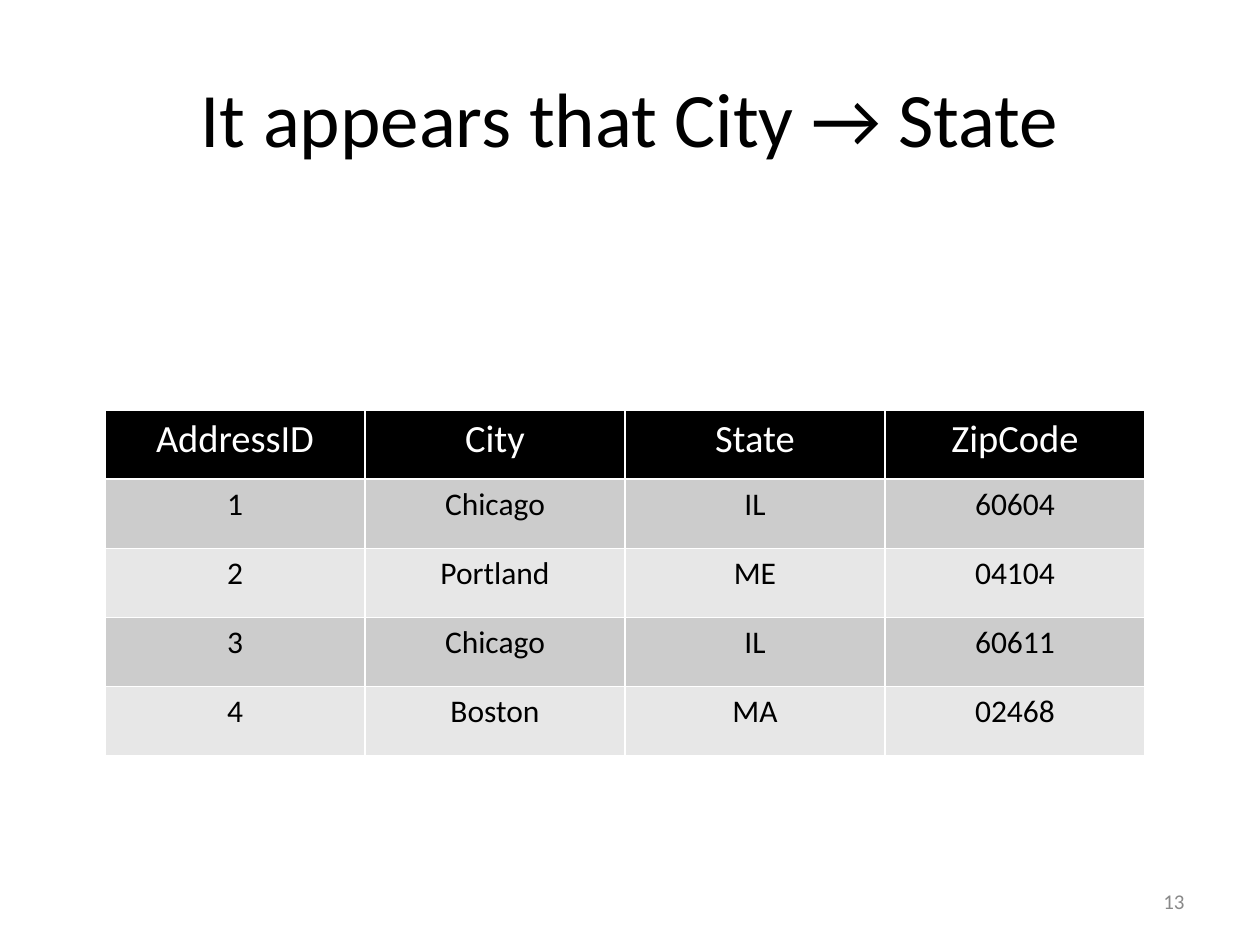
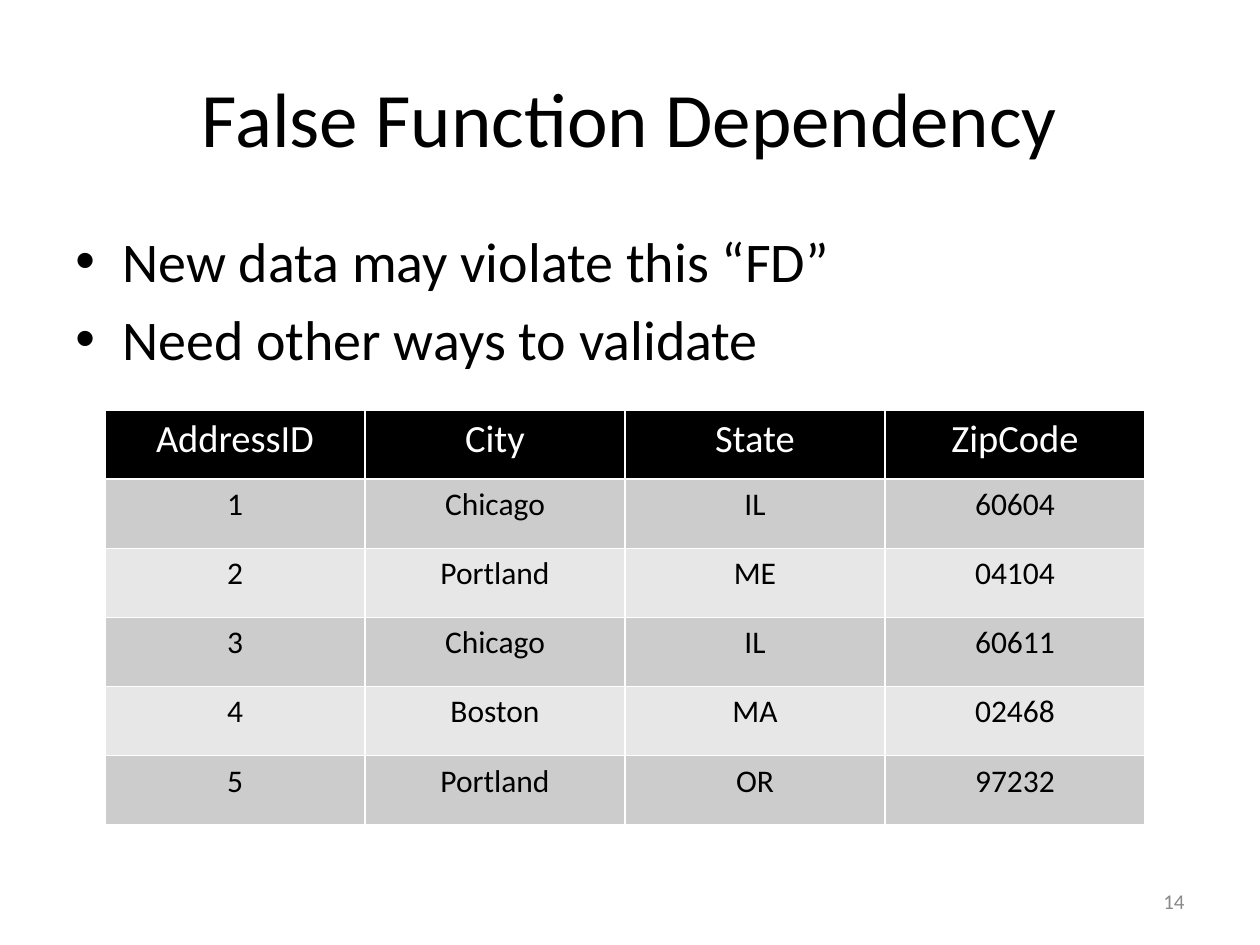
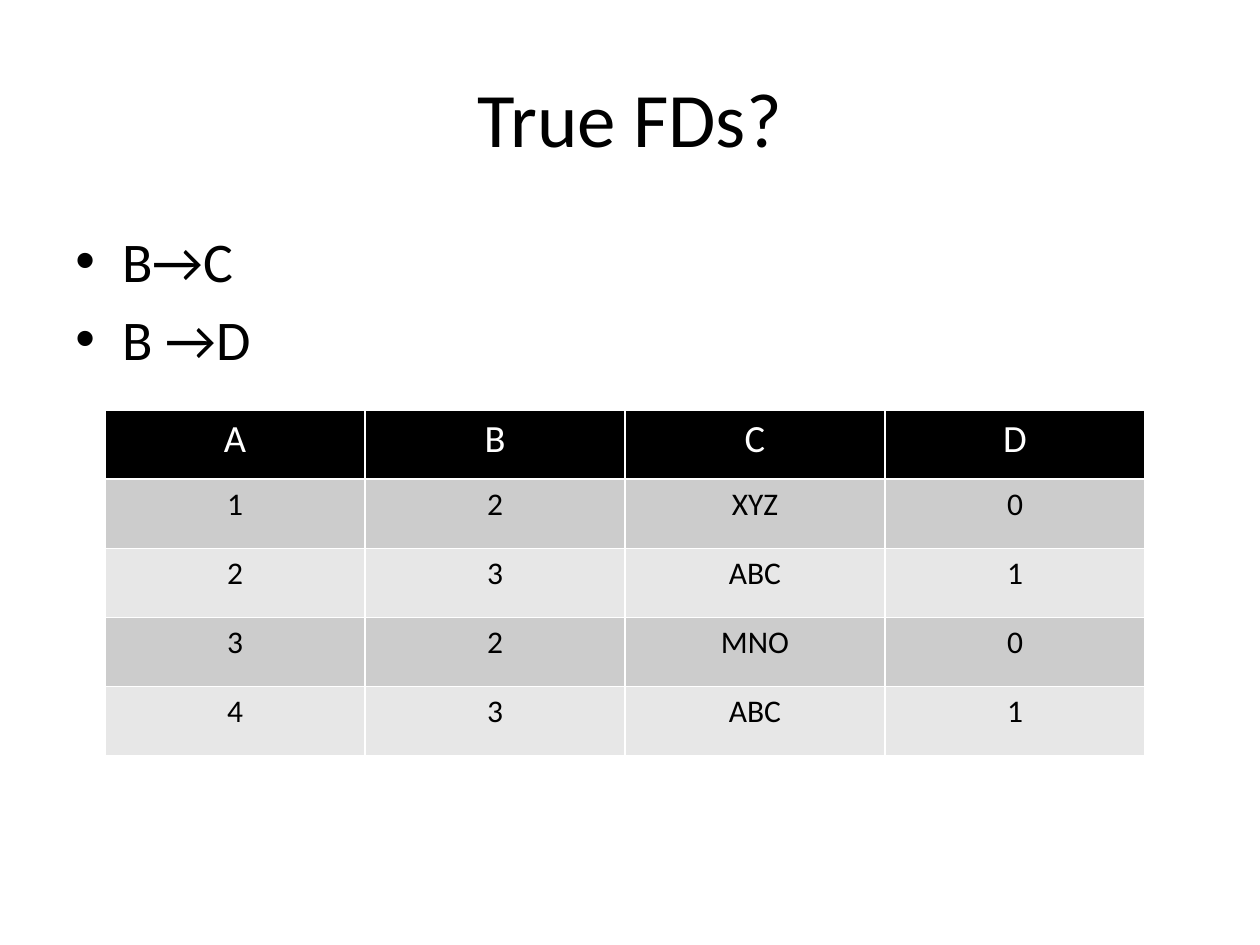
from lxml.etree import SubElement
from pptx import Presentation
from pptx.dml.color import RGBColor
from pptx.enum.text import MSO_ANCHOR as Anchor, PP_ALIGN as Align
from pptx.oxml.ns import qn
from pptx.util import Pt

PX = 914400 / 126
FONT = "Calibri"
BLACK, WHITE, GRAY = "000000", "FFFFFF", "898989"
BANDS = ["E7E7E7", "CCCCCC"]
BULLET_INDENT = 47

ADDRESSES = [
    ["AddressID", "City", "State", "ZipCode"],
    ["1", "Chicago", "IL", "60604"],
    ["2", "Portland", "ME", "04104"],
    ["3", "Chicago", "IL", "60611"],
    ["4", "Boston", "MA", "02468"],
]
NEW_ADDRESS = ["5", "Portland", "OR", "97232"]
LETTERS = [
    ["A", "B", "C", "D"],
    ["1", "2", "XYZ", "0"],
    ["2", "3", "ABC", "1"],
    ["3", "2", "MNO", "0"],
    ["4", "3", "ABC", "1"],
]
SLIDES = [
    ("It appears that City → State", [], ADDRESSES, "13"),
    ("False Function Dependency",
     ["New data may violate this “FD”", "Need other ways to validate"],
     ADDRESSES + [NEW_ADDRESS], "14"),
    ("True FDs?", ["B→C", "B →D"], LETTERS, None),
]


def emu(*lengths):
    return [round(length * PX) for length in lengths]


def write(paragraph, text, size, color, align):
    paragraph.alignment = align
    run = paragraph.add_run()
    run.text = text
    run.font.name = FONT
    run.font.size = Pt(size)
    run.font.bold = False
    run.font.color.rgb = RGBColor.from_string(color)


presentation = Presentation()
presentation.slide_width, presentation.slide_height = emu(1260, 945)

for title, bullets, rows, number in SLIDES:
    slide = presentation.slides.add_slide(presentation.slide_layouts[6])

    texts = [(title, (63, 38, 1134, 157), 44, BLACK, Align.CENTER)]
    if number:
        texts.append((number, (903, 876, 294, 50), 12, GRAY, Align.RIGHT))
    for text, box, size, color, align in texts:
        frame = slide.shapes.add_textbox(*emu(*box)).text_frame
        frame.word_wrap = True
        frame.vertical_anchor = Anchor.MIDDLE
        write(frame.paragraphs[0], text, size, color, align)

    if bullets:
        frame = slide.shapes.add_textbox(*emu(63, 220, 1134, 624)).text_frame
        frame.word_wrap = True
        for index, text in enumerate(bullets):
            paragraph = frame.add_paragraph() if index else frame.paragraphs[0]
            write(paragraph, text, 32, BLACK, Align.LEFT)
            paragraph.space_before = Pt(6.4)
            properties = paragraph._p.get_or_add_pPr()
            indent = emu(BULLET_INDENT)[0]
            properties.set("marL", str(indent))
            properties.set("indent", str(-indent))
            SubElement(properties, qn("a:buFont")).set("typeface", "Arial")
            SubElement(properties, qn("a:buChar")).set("char", "•")

    table_height = len(rows) * 693 // 10
    table = slide.shapes.add_table(
        len(rows), len(rows[0]), *emu(105, 410, 1040, table_height)).table
    for row_index, row in enumerate(rows):
        header = row_index == 0
        fill = BLACK if header else BANDS[row_index % 2]
        size, color = (22, WHITE) if header else (18, BLACK)
        for column_index, text in enumerate(row):
            cell = table.cell(row_index, column_index)
            cell.fill.solid()
            cell.fill.fore_color.rgb = RGBColor.from_string(fill)
            write(cell.text_frame.paragraphs[0], text, size, color, Align.CENTER)

presentation.save("out.pptx")
